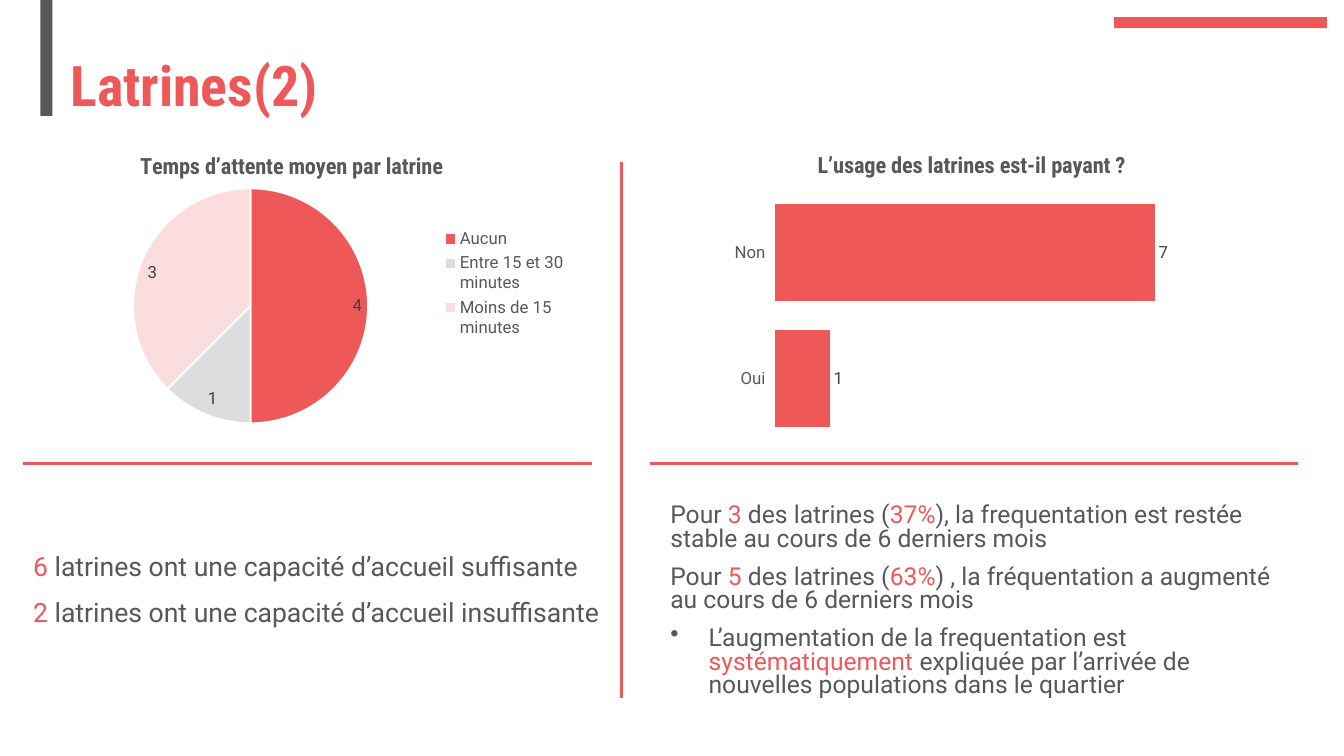
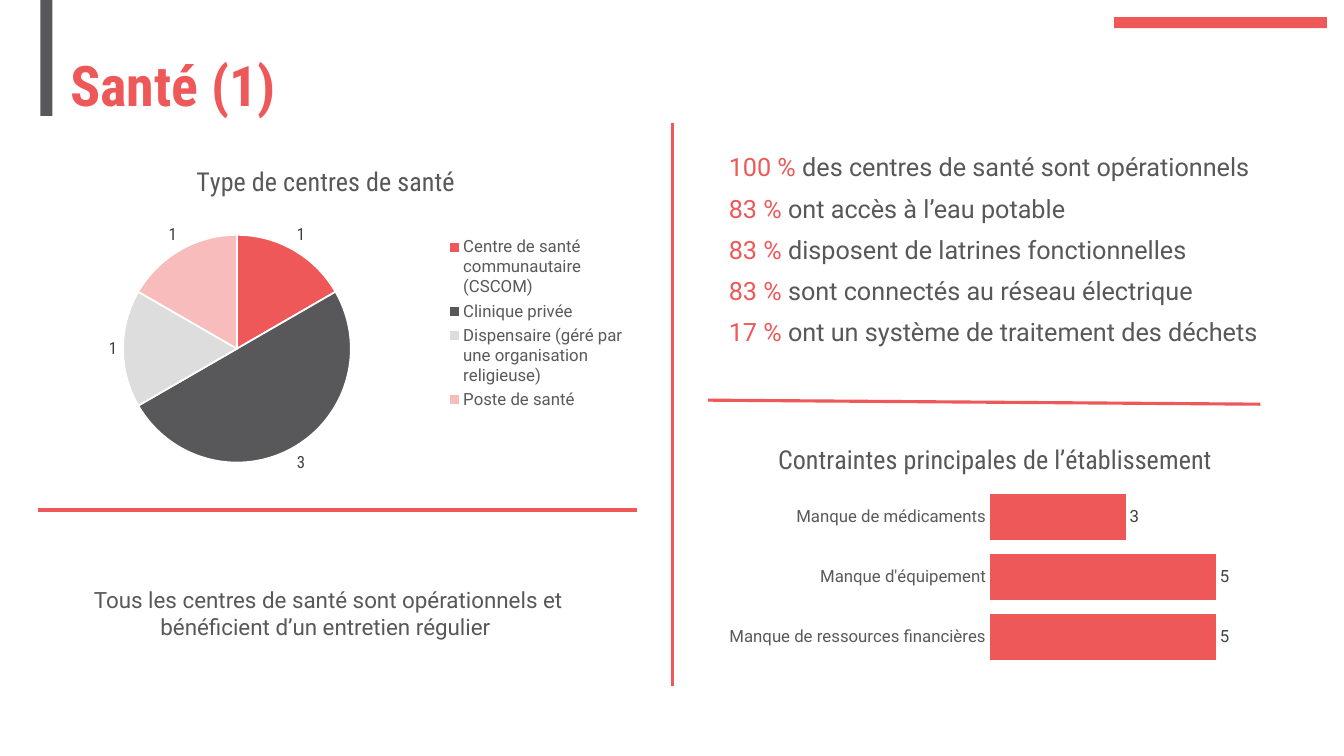
from lxml import etree
from pptx import Presentation
from pptx.chart.data import CategoryChartData
from pptx.dml.color import RGBColor
from pptx.enum import chart as charts, shapes, text
from pptx.oxml import ns
from pptx.util import Inches, Pt

COLOURS = {
    "red": "EE5859",
    "dark": "58585A",
    "grey": "DDDDDE",
    "pink": "F8BCBC",
    "pale": "FBDDDD",
    "label": "404040",
    "axis": "595959",
    "white": "FFFFFF",
}
BODY = "Roboto"
HEADING = "Roboto Condensed"


def colour(name):
    return RGBColor.from_string(COLOURS[name])


def style_font(font, size, name, tint, bold=False):
    font.size = Pt(size)
    font.name = name
    font.bold = bold
    font.color.rgb = colour(tint)


def add_band(page, box, tint):
    band = page.shapes.add_shape(shapes.MSO_SHAPE.RECTANGLE, *map(Inches, box))
    band.shadow.inherit = False
    band.fill.solid()
    band.fill.fore_color.rgb = colour(tint)
    band.line.fill.background()


def add_rule(page, start, end):
    rule = page.shapes.add_connector(
        shapes.MSO_CONNECTOR.STRAIGHT, *map(Inches, (*start, *end)))
    rule.line.color.rgb = colour("red")
    rule.line.width = Pt(2.25)
    etree.SubElement(rule._element.spPr, ns.qn("a:effectLst"))


def add_bullet(para):
    properties = para._p.get_or_add_pPr()
    properties.set("marL", str(Inches(0.38)))
    properties.set("indent", str(Inches(-0.38)))
    etree.SubElement(properties, ns.qn("a:buChar")).set("char", "•")


def add_text(page, box, paragraphs, size, spacing=1.0, before=10, font=BODY,
             bold=False, align=None, anchor=text.MSO_ANCHOR.TOP, bullets=()):
    frame = page.shapes.add_textbox(*map(Inches, box)).text_frame
    frame.word_wrap = True
    frame.vertical_anchor = anchor
    for index, spans in enumerate(paragraphs):
        para = frame.add_paragraph() if index else frame.paragraphs[0]
        para.line_spacing = spacing
        para.space_before = Pt(before)
        para.alignment = align
        if index in bullets:
            add_bullet(para)
        for tint, words in spans:
            span = para.add_run()
            span.text = words
            style_font(span.font, size, font, tint, bold)


def add_page(deck, title):
    page = deck.slides.add_slide(deck.slide_layouts[6])
    add_band(page, (11.05, 0.17, 2.11, 0.11), "red")
    add_band(page, (0.4, 0, 0.12, 1.15), "dark")
    add_text(page, (0.6, 0.54, 4.87, 0.67), [[("red", title)]], 40, 0.9, 0,
             HEADING, True, anchor=text.MSO_ANCHOR.MIDDLE)
    return page


def set_layout(parent, index, box, area, inner=False):
    for old in parent.findall(ns.qn("c:layout")):
        parent.remove(old)
    layout = etree.Element(ns.qn("c:layout"))
    manual = etree.SubElement(layout, ns.qn("c:manualLayout"))
    left, top, width, height = box
    values = [("xMode", "edge"), ("yMode", "edge"),
              ("x", (area[0] - left) / width), ("y", (area[1] - top) / height)]
    if inner:
        values.insert(0, ("layoutTarget", "inner"))
    if len(area) == 4:
        values += [("w", area[2] / width), ("h", area[3] / height)]
    for name, value in values:
        etree.SubElement(manual, ns.qn(f"c:{name}")).set("val", str(value))
    parent.insert(index, layout)


def add_chart(page, kind, box, title, title_at, title_style, rows, plot_area,
              label_position, label_font=BODY):
    data = CategoryChartData()
    data.categories = [name for name, _ in rows]
    data.add_series("Series 1", [value for _, value in rows])
    chart = page.shapes.add_chart(kind, *map(Inches, box), data).chart
    chart.font.name = BODY
    chart.font.size = Pt(10)
    chart.has_legend = False
    chart.has_title = True
    span = chart.chart_title.text_frame.paragraphs[0].add_run()
    span.text = title
    size, bold = title_style
    style_font(span.font, size, HEADING, "dark", bold)
    set_layout(chart.chart_title._element, 1, box, title_at)
    set_layout(chart._chartSpace.chart.plotArea, 0, box, plot_area, True)
    plot = chart.plots[0]
    plot.has_data_labels = True
    labels = plot.data_labels
    labels.show_value = True
    labels.position = label_position
    style_font(labels.font, 12, label_font, "label")
    return chart


def add_pie(page, box, title, title_at, title_style, rows, tints, plot_area,
            legend_area, label_position, label_font=BODY):
    chart = add_chart(page, charts.XL_CHART_TYPE.PIE, box, title, title_at,
                      title_style, rows, plot_area, label_position, label_font)
    chart.plots[0].vary_by_categories = True
    for index, tint in enumerate(tints):
        look = chart.plots[0].series[0].points[index].format
        look.fill.solid()
        look.fill.fore_color.rgb = colour(tint)
        look.line.color.rgb = colour("white")
        look.line.width = Pt(1.25)
    chart.has_legend = True
    chart.legend.position = charts.XL_LEGEND_POSITION.RIGHT
    chart.legend.include_in_layout = False
    style_font(chart.legend.font, 12, BODY, "axis")
    set_layout(chart.legend._element, 1, box, legend_area)


def add_bars(page, box, title, title_at, title_style, rows, plot_area, maximum,
             tick):
    chart = add_chart(page, charts.XL_CHART_TYPE.BAR_CLUSTERED, box, title,
                      title_at, title_style, rows, plot_area,
                      charts.XL_LABEL_POSITION.OUTSIDE_END)
    plot = chart.plots[0]
    plot.gap_width = 30
    plot.vary_by_categories = False
    look = plot.series[0].format
    look.fill.solid()
    look.fill.fore_color.rgb = colour("red")
    chart.value_axis.visible = False
    chart.value_axis.has_major_gridlines = False
    chart.value_axis.minimum_scale = 0
    chart.value_axis.maximum_scale = maximum
    axis = chart.category_axis
    axis.major_tick_mark = tick
    axis.format.line.fill.background()
    style_font(axis.tick_labels.font, 12, BODY, "axis")


def build_latrines(deck):
    page = add_page(deck, "Latrines(2)")
    add_rule(page, (6.16, 1.61), (6.16, 6.92))
    add_rule(page, (0.23, 4.6), (5.87, 4.6))
    add_rule(page, (6.45, 4.6), (12.87, 4.6))
    add_pie(page, (0.6, 1.26, 5.13, 3.09), "Temps d’attente moyen par latrine",
            (1.35, 1.47), (16, True),
            [("Aucun", 4), ("Entre 15 et 30 minutes", 1),
             ("Moins de 15 minutes", 3)],
            ("red", "grey", "pale"), (1.32, 1.87, 2.33, 2.33),
            (4.33, 2.23, 1.35, 1.16), charts.XL_LABEL_POSITION.INSIDE_END)
    add_bars(page, (7.17, 1.35, 4.93, 3.09),
             "L’usage des latrines est-il payant ?", (8.07, 1.46), (16, True),
             [("Oui", 1), ("Non", 7)], (7.69, 1.88, 4.3, 2.5), 8,
             charts.XL_TICK_MARK.OUTSIDE)
    capacities = [("6 ", "suffisante"), ("2 ", "insuffisante")]
    add_text(page, (0.23, 5.41, 5.82, 1.19),
             [[("red", count),
               ("dark", f"latrines ont une capacité d’accueil {state}")]
              for count, state in capacities], 19)
    trends = [
        (" 3 ", "37%", "), la frequentation est restée stable"),
        (" 5 ", "63%", ") , la fréquentation a augmenté"),
    ]
    paragraphs = [[("dark", "Pour"), ("red", count), ("dark", "des latrines ("),
                   ("red", share), ("dark", f"{trend} au cours de 6 derniers mois")]
                  for count, share, trend in trends]
    paragraphs.append([
        ("dark", "L’augmentation de la frequentation est "),
        ("red", "systématiquement "),
        ("dark", "expliquée par l’arrivée de nouvelles populations dans le quartier"),
    ])
    add_text(page, (6.55, 4.96, 6.32, 2.06), paragraphs, 17.6, 0.8, bullets=(2,))


def build_health(deck):
    page = add_page(deck, "Santé (1)")
    facts = [
        ("100 % ", "des centres de santé sont opérationnels"),
        ("83 % ", "ont accès à l’eau potable"),
        ("83 % ", "disposent de latrines fonctionnelles"),
        ("83 % ", "sont connectés au réseau électrique"),
        ("17 % ", "ont un système de traitement des déchets"),
    ]
    add_text(page, (7.13, 1.49, 5.94, 2.15),
             [[("red", share), ("dark", fact)] for share, fact in facts], 18, 0.9)
    add_rule(page, (6.67, 1.22), (6.67, 6.81))
    add_rule(page, (7.02, 3.97), (12.5, 4.01))
    add_rule(page, (0.38, 5.06), (6.32, 5.06))
    add_pie(page, (0.15, 1.49, 6.17, 3.42), "Type de centres de santé",
            (1.9, 1.58), (18.6, False),
            [("Centre de santé communautaire (CSCOM)", 1), ("Clinique privée", 3),
             ("Dispensaire (géré par une organisation religieuse)", 1),
             ("Poste de santé", 1)],
            ("red", "dark", "grey", "pink"), (1.22, 2.33, 2.26, 2.26),
            (4.39, 2.31, 1.85, 1.8), charts.XL_LABEL_POSITION.OUTSIDE_END, HEADING)
    add_text(page, (0.3, 5.77, 5.91, 0.9),
             [[("dark", "Tous les centres de santé sont opérationnels et "
                        "bénéficient d’un entretien régulier ")]],
             16, align=text.PP_ALIGN.CENTER)
    add_bars(page, (6.75, 4.27, 6.5, 2.4),
             "Contraintes principales de l’établissement", (7.67, 4.34),
             (18.6, False),
             [("Manque de ressources financières", 5),
              ("Manque d'équipement", 5), ("Manque de médicaments", 3)],
             (9.82, 4.83, 2.69, 1.79), 6, charts.XL_TICK_MARK.NONE)


def main():
    deck = Presentation()
    deck.slide_width = Inches(13.33)
    deck.slide_height = Inches(7.5)
    build_latrines(deck)
    build_health(deck)
    deck.save("out.pptx")


if __name__ == "__main__":
    main()
